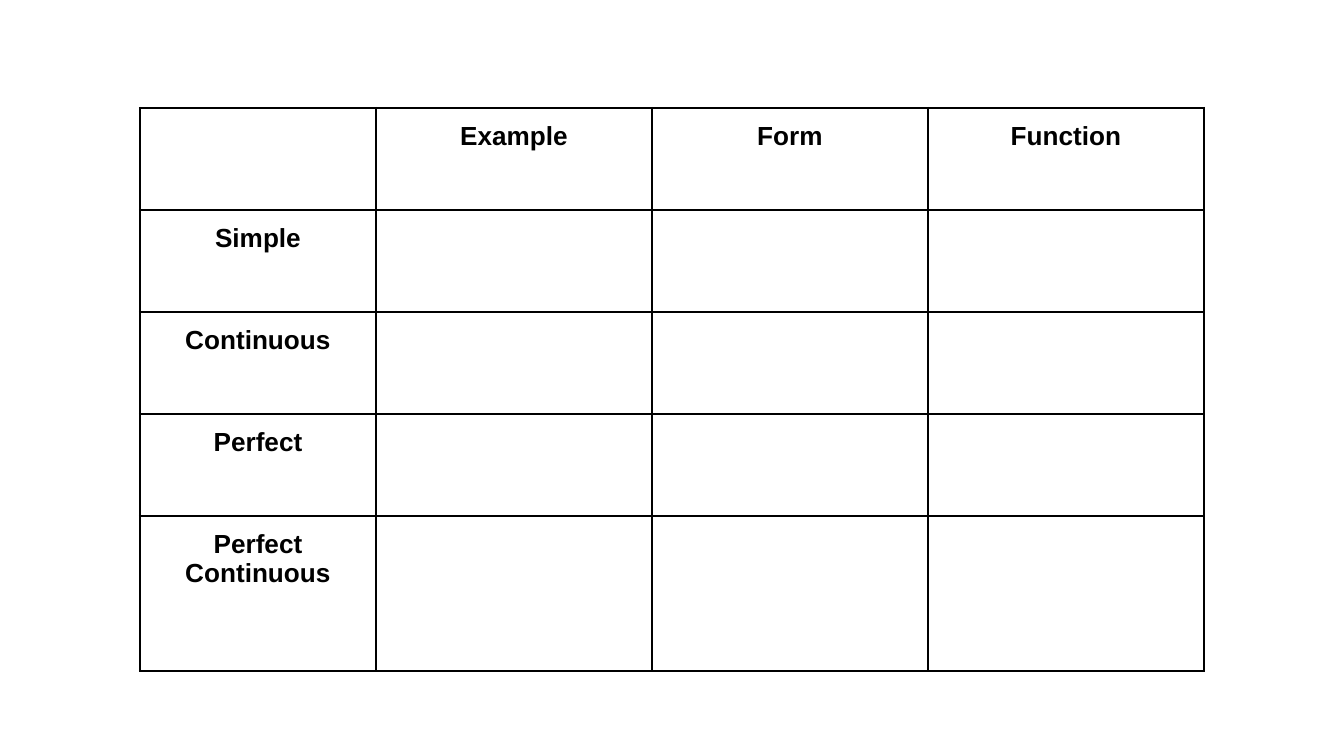
from lxml import etree
from pptx import Presentation
from pptx.dml.color import RGBColor
from pptx.enum.text import MSO_ANCHOR, PP_ALIGN
from pptx.oxml.ns import qn
from pptx.util import Inches, Pt

# Content
HEADERS = ["", "Example", "Form", "Function"]
TENSES = ["Simple", "Continuous", "Perfect", "Perfect Continuous"]
ROWS = [HEADERS] + [[tense, "", "", ""] for tense in TENSES]

# Layout in px
SLIDE_W, SLIDE_H = 1344, 756
LEFT, TOP = 140, 108
COL_WIDTHS = [236] + [276] * 3
ROW_HEIGHTS = [102] * 4 + [155]
BLACK = "000000"


def px(n):
    return round(n * Inches(10) / SLIDE_W)


def rgb(color):
    return RGBColor.from_string(color)


def write(tf, text, size=14, font="Arial", color=BLACK, bold=True):
    p = tf.paragraphs[0]
    p.alignment = PP_ALIGN.CENTER
    r = p.add_run()
    r.text = text
    r.font.size = Pt(size)
    r.font.name = font
    r.font.bold = bold
    r.font.color.rgb = rgb(color)


def add_borders(cell, color=BLACK, width=1.5):
    tcPr = cell._tc.get_or_add_tcPr()
    for i, side in enumerate(("lnL", "lnR", "lnT", "lnB")):
        ln = etree.Element(qn(f"a:{side}"), w=str(Pt(width)))
        fill = etree.SubElement(ln, qn("a:solidFill"))
        etree.SubElement(fill, qn("a:srgbClr"), val=color)
        tcPr.insert(i, ln)


prs = Presentation()
prs.slide_width, prs.slide_height = px(SLIDE_W), px(SLIDE_H)
s = prs.slides.add_slide(prs.slide_layouts[6])

# Tense table
table = s.shapes.add_table(
    len(ROWS), len(HEADERS), px(LEFT), px(TOP),
    px(sum(COL_WIDTHS)), px(sum(ROW_HEIGHTS))).table
table.first_row = table.horz_banding = False
for col, width in zip(table.columns, COL_WIDTHS):
    col.width = px(width)
for row, height in zip(table.rows, ROW_HEIGHTS):
    row.height = px(height)

# Cells
for row, texts in zip(table.rows, ROWS):
    for cell, text in zip(row.cells, texts):
        cell.fill.background()
        cell.vertical_anchor = MSO_ANCHOR.TOP
        cell.margin_left = cell.margin_right = Inches(0.1)
        cell.margin_top = cell.margin_bottom = Inches(0.1)
        add_borders(cell)
        if text:
            write(cell.text_frame, text)

prs.save("out.pptx")
